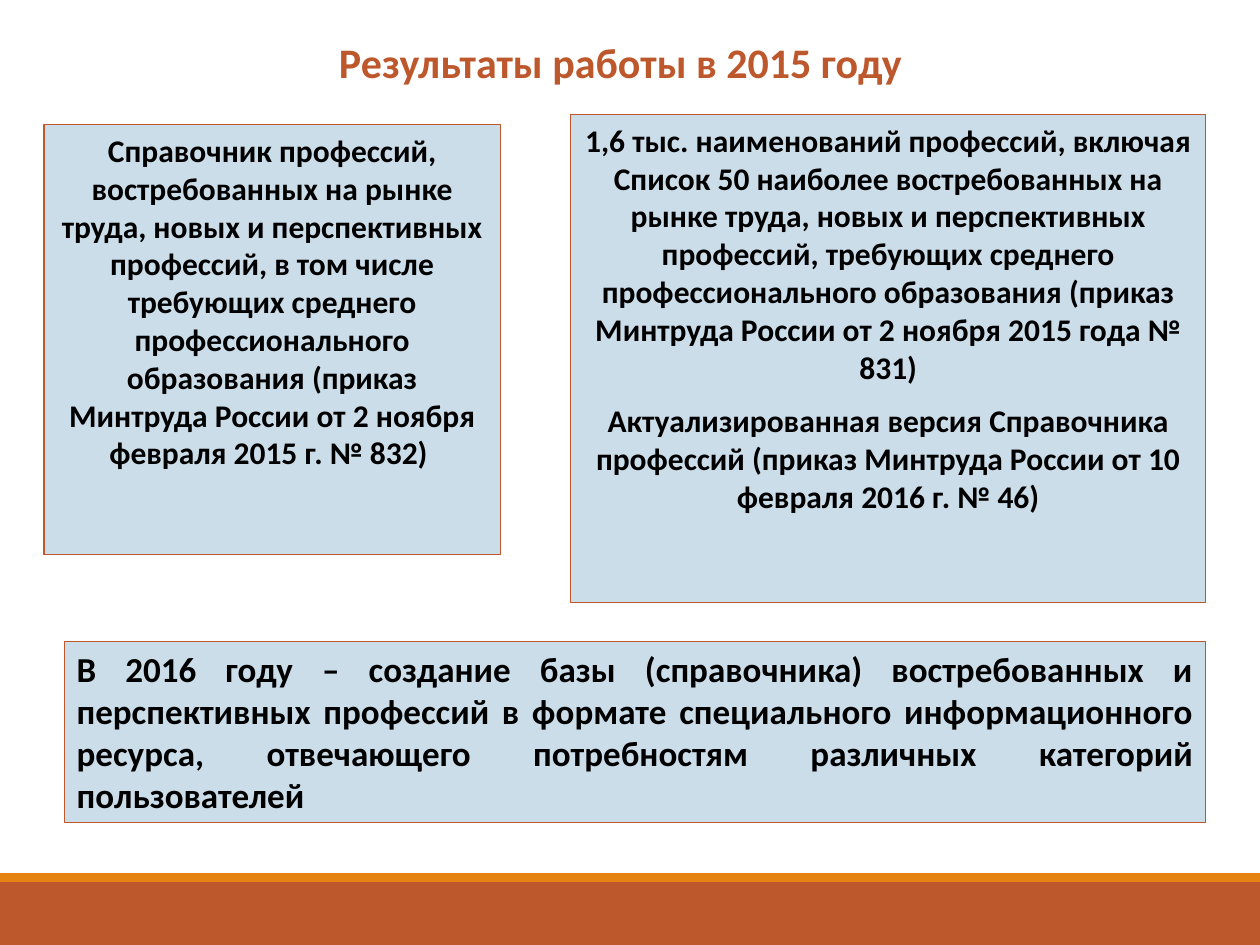
from typing import NamedTuple, Optional

from pptx import Presentation
from pptx.dml.color import RGBColor
from pptx.enum.shapes import MSO_SHAPE as Shape
from pptx.enum.text import MSO_ANCHOR as Anchor, PP_ALIGN as Align
from pptx.util import Inches, Pt

RUST = RGBColor(0xBD, 0x58, 0x2C)
ORANGE = RGBColor(0xE4, 0x83, 0x12)
PALE_BLUE = RGBColor(0xCC, 0xDD, 0xEA)
BLACK = RGBColor(0, 0, 0)
FONT = "Calibri"

# The slide is a grid of 100 columns by 75 rows of square cells.
CELL = Inches(0.1)
COLUMNS, ROWS = 100, 75
RIGHT_EDGE = 95.7
FOOTER_TOP = 70
STRIPE_HEIGHT = 0.7


class Area(NamedTuple):
    column: float
    row: float
    columns: float
    rows: float

    def emu(self) -> list[int]:
        return [round(cells * CELL) for cells in self]


class Panel(NamedTuple):
    area: Area
    paragraphs: tuple[str, ...]
    size: int = 18
    align: Align = Align.CENTER
    color: RGBColor = BLACK
    fill: Optional[RGBColor] = PALE_BLUE


BANDS = (
    (Area(0, FOOTER_TOP, COLUMNS, ROWS - FOOTER_TOP), RUST),
    (Area(0, FOOTER_TOP - STRIPE_HEIGHT, COLUMNS, STRIPE_HEIGHT), ORANGE),
)

PANELS = (
    Panel(
        Area(14.6, 2.4, 69.3, 5),
        ("Результаты работы в 2015 году",),
        size=24, color=RUST, fill=None,
    ),
    Panel(
        Area(3.5, 9.9, 36.2, 34.1),
        ("Справочник профессий, востребованных на рынке труда, новых и "
         "перспективных профессий, в том числе требующих среднего "
         "профессионального образования (приказ Минтруда России от 2 ноября "
         "февраля 2015 г. № 832) ",),
    ),
    Panel(
        Area(45.3, 9.1, RIGHT_EDGE - 45.3, 38.7),
        ("1,6 тыс. наименований профессий, включая Список 50 наиболее "
         "востребованных на рынке труда, новых и перспективных профессий, "
         "требующих среднего профессионального образования (приказ Минтруда "
         "России от 2 ноября 2015 года № 831)",
         "Актуализированная версия Справочника профессий (приказ Минтруда "
         "России от 10 февраля 2016 г. № 46)"),
    ),
    Panel(
        Area(5.1, 50.9, RIGHT_EDGE - 5.1, 14.4),
        ("В 2016 году – создание базы (справочника) востребованных и "
         "перспективных профессий в формате специального информационного "
         "ресурса, отвечающего потребностям различных категорий "
         "пользователей",),
        size=20, align=Align.JUSTIFY,
    ),
)


def draw_rectangle(slide, area: Area, fill: RGBColor, outline: Optional[RGBColor] = None):
    rectangle = slide.shapes.add_shape(Shape.RECTANGLE, *area.emu())
    rectangle.shadow.inherit = False
    rectangle.fill.solid()
    rectangle.fill.fore_color.rgb = fill
    if outline is None:
        rectangle.line.fill.background()
    else:
        rectangle.line.color.rgb = outline
        rectangle.line.width = Pt(0.75)
    return rectangle


def draw_panel(slide, panel: Panel) -> None:
    if panel.fill is None:
        holder = slide.shapes.add_textbox(*panel.area.emu())
    else:
        holder = draw_rectangle(slide, panel.area, panel.fill, outline=RUST)
    frame = holder.text_frame
    frame.word_wrap = True
    frame.vertical_anchor = Anchor.TOP
    for index, wording in enumerate(panel.paragraphs):
        paragraph = frame.add_paragraph() if index else frame.paragraphs[0]
        paragraph.alignment = panel.align
        if index:
            paragraph.space_before = Pt(panel.size / 2)
        run = paragraph.add_run()
        run.text = wording
        run.font.name = FONT
        run.font.size = Pt(panel.size)
        run.font.bold = True
        run.font.color.rgb = panel.color


def main() -> None:
    deck = Presentation()
    deck.slide_width = COLUMNS * CELL
    deck.slide_height = ROWS * CELL
    slide = deck.slides.add_slide(deck.slide_layouts[6])
    for area, color in BANDS:
        draw_rectangle(slide, area, color)
    for panel in PANELS:
        draw_panel(slide, panel)
    deck.save("out.pptx")


if __name__ == "__main__":
    main()
